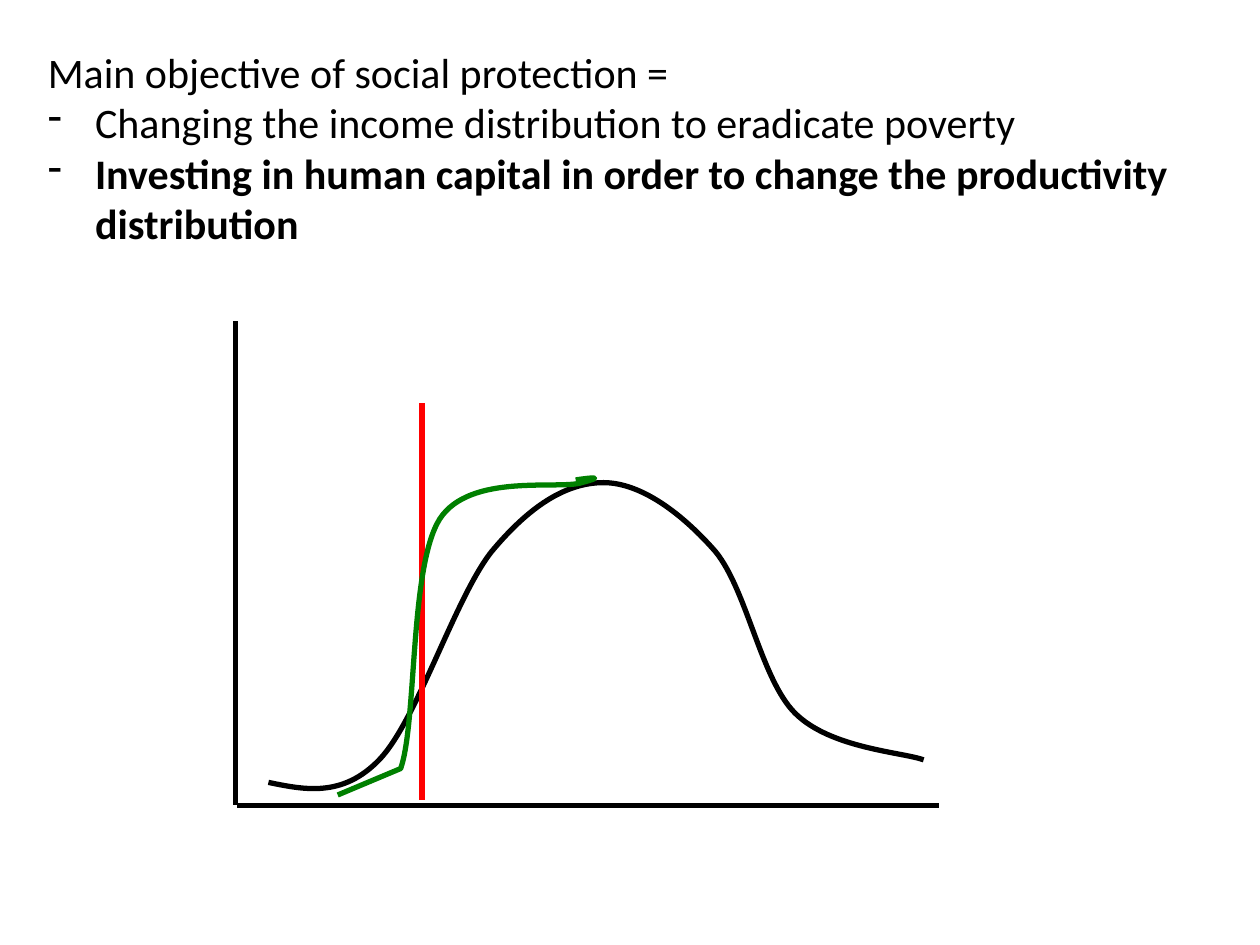
import dataclasses
import typing

import lxml.etree
import pptx
import pptx.dml.color
import pptx.enum.shapes
import pptx.oxml.ns
import pptx.util

Pt = pptx.util.Pt
qn = pptx.oxml.ns.qn
Point = tuple[float, float]


@dataclasses.dataclass(frozen=True)
class Theme:
    ink: str = "000000"
    poverty: str = "FF0000"
    target: str = "008000"
    font: str = "Calibri"
    text_size: float = 24
    line_width: float = 3
    indent: float = 27


@dataclasses.dataclass(frozen=True)
class Line:
    start: Point
    end: Point
    color: str


@dataclasses.dataclass(frozen=True)
class Curve:
    start: Point
    controls: list[Point]
    color: str
    straight: int = 0


@dataclasses.dataclass(frozen=True)
class Statement:
    text: str
    bullet: bool = False
    bold: bool = False


THEME = Theme()

AXES = [
    Line((134.6, 183.6), (134.6, 460.1), THEME.ink),
    Line((135.4, 460.1), (536.4, 460.1), THEME.ink),
]
POVERTY_LINE = Line((241.2, 230.4), (241.2, 457.2), THEME.poverty)
DISTRIBUTION = Curve(
    (153.4, 447.1),
    [
        (174.2, 451.4), (195.8, 455.8), (216.7, 434.2),
        (238.3, 411.8), (259.9, 342), (280.8, 315.4),
        (302.4, 289.4), (323.3, 275.8), (344.9, 275.8),
        (366.5, 275.8), (390.2, 293.8), (409, 315.4),
        (427, 337.7), (434.9, 388.1), (454.3, 407.5),
        (474.5, 427.7), (515.5, 429.8), (527.8, 434.2),
    ],
    THEME.ink,
)
TARGET_DISTRIBUTION = Curve(
    (193, 454.3),
    [
        (229, 439.2),
        (238.3, 412.6), (234, 324), (251.3, 296.6),
        (268.6, 270), (319.7, 280.1), (332.6, 275.8),
        (346.3, 272.2), (337.7, 272.9), (329, 274.3),
    ],
    THEME.target,
    straight=1,
)
STATEMENTS = [
    Statement("Main objective of social protection ="),
    Statement("Changing the income distribution to eradicate poverty", bullet=True),
    Statement(
        "Investing in human capital in order to change the productivity distribution",
        bullet=True,
        bold=True,
    ),
]


def rgb(color: str) -> pptx.dml.color.RGBColor:
    return pptx.dml.color.RGBColor.from_string(color)


def style_line(sp: typing.Any, color: str) -> None:
    sp.line.color.rgb = rgb(color)
    sp.line.width = Pt(THEME.line_width)


def draw_line(shapes: typing.Any, line: Line) -> None:
    sp = shapes.add_connector(
        pptx.enum.shapes.MSO_CONNECTOR.STRAIGHT,
        *(Pt(v) for v in line.start + line.end),
    )
    style_line(sp, line.color)
    lxml.etree.SubElement(sp._element.spPr, qn("a:effectLst"))


def draw_curve(shapes: typing.Any, curve: Curve) -> None:
    builder = shapes.build_freeform(*(Pt(v) for v in curve.start))
    builder.add_line_segments(
        [(Pt(x), Pt(y)) for x, y in curve.controls], close=False
    )
    sp = builder.convert_to_shape()
    sp.shadow.inherit = False
    sp.fill.background()
    style_line(sp, curve.color)
    outline = next(sp._element.iter(qn("a:path")))
    segments = outline.findall(qn("a:lnTo"))[curve.straight:]
    for i in range(0, len(segments), 3):
        bezier = lxml.etree.SubElement(outline, qn("a:cubicBezTo"))
        for segment in segments[i:i + 3]:
            bezier.append(segment[0])
            outline.remove(segment)


def add_bullet(p: typing.Any) -> None:
    pPr = p._p.get_or_add_pPr()
    indent = Pt(THEME.indent)
    pPr.set("marL", str(indent))
    pPr.set("indent", str(-indent))
    color = lxml.etree.SubElement(pPr, qn("a:buClr"))
    lxml.etree.SubElement(color, qn("a:srgbClr"), val=THEME.ink)
    lxml.etree.SubElement(pPr, qn("a:buFontTx"))
    lxml.etree.SubElement(pPr, qn("a:buChar"), char="-")


def write_statements(shapes: typing.Any, statements: list[Statement]) -> None:
    sp = shapes.add_textbox(Pt(20.2), Pt(23), Pt(663.8), Pt(122.4))
    tf = sp.text_frame
    tf.word_wrap = True
    tf.text = "\n".join(statement.text for statement in statements)
    for p, statement in zip(tf.paragraphs, statements):
        if statement.bullet:
            add_bullet(p)
        r = p.runs[0]
        r.font.name = THEME.font
        r.font.size = Pt(THEME.text_size)
        r.font.bold = statement.bold
        r.font.color.rgb = rgb(THEME.ink)


def main() -> None:
    prs = pptx.Presentation()
    prs.slide_width, prs.slide_height = Pt(720), Pt(540)
    s = prs.slides.add_slide(prs.slide_layouts[6])
    chart = s.shapes.add_group_shape()
    for axis in AXES:
        draw_line(chart.shapes, axis)
    draw_curve(chart.shapes, DISTRIBUTION)
    write_statements(s.shapes, STATEMENTS)
    draw_line(s.shapes, POVERTY_LINE)
    draw_curve(s.shapes, TARGET_DISTRIBUTION)
    prs.save("out.pptx")


if __name__ == "__main__":
    main()
